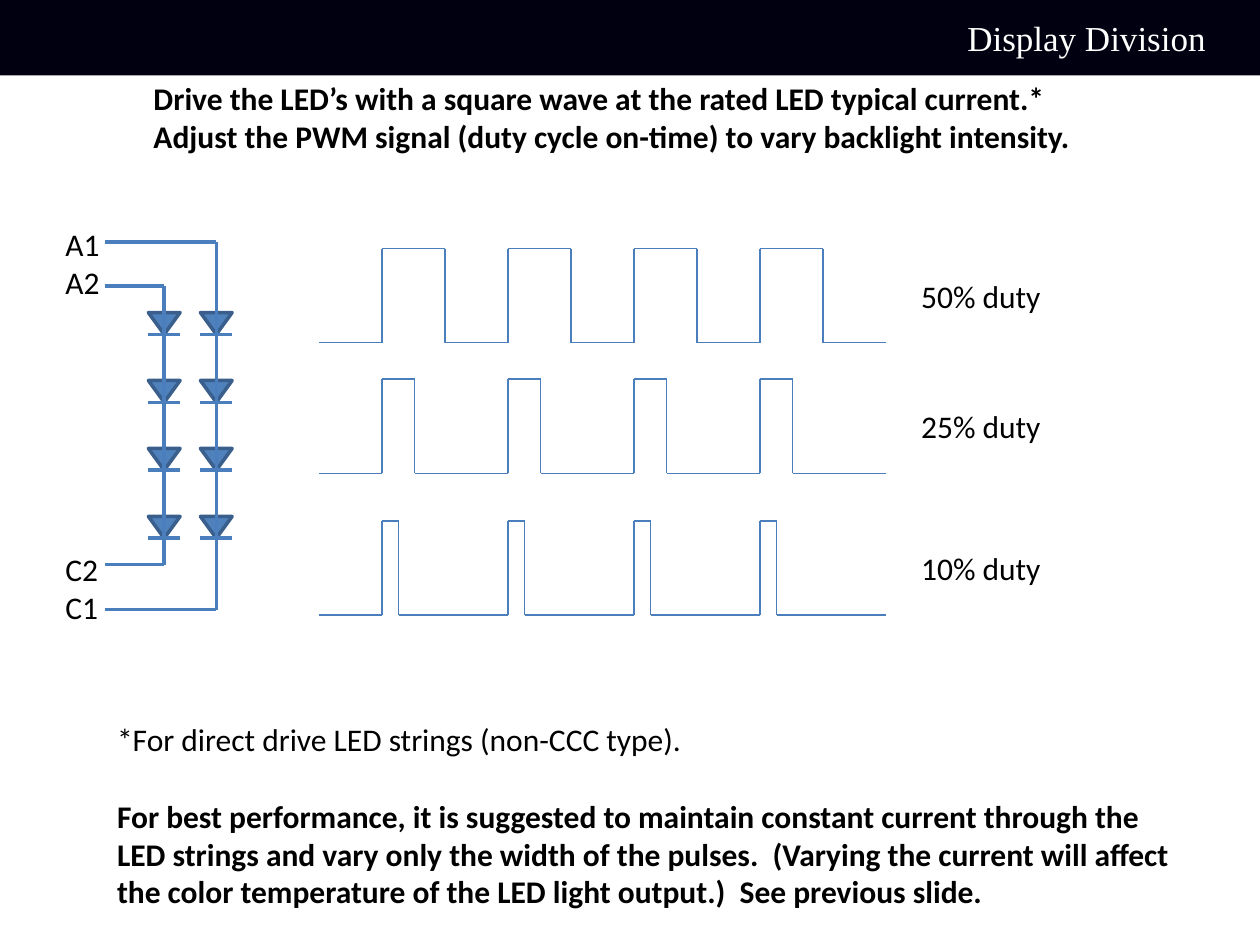
from itertools import pairwise

from lxml.etree import SubElement
from pptx import Presentation
from pptx.dml.color import RGBColor
from pptx.enum.shapes import MSO_CONNECTOR as Connector, MSO_SHAPE as Shape
from pptx.enum.text import MSO_ANCHOR as Anchor, MSO_AUTO_SIZE as AutoSize, PP_ALIGN as Align
from pptx.oxml.ns import qn
from pptx.util import Cm, Pt

COLORS = {
    "band": "000010",
    "white": "FFFFFF",
    "text": "000000",
    "line": "4B7EBC",
    "diode": "4F81BD",
    "diode_edge": "3A5F8C",
}
WAVE_LEFT, PERIOD, PULSE_HEIGHT, LEAD_IN = 6.43, 2.54, 1.9, 1.27
WAVES = [("50% duty", 6.91, 1.27), ("25% duty", 9.54, 0.66), ("10% duty", 12.4, 0.34)]
TERMINAL_X, INNER_X, OUTER_X = 2.11, 3.31, 4.36
DIODE_TOP, DIODE_PITCH, DIODE_WIDTH, DIODE_HEIGHT = 6.3, 1.37, 0.64, 0.44


def color(name):
    """Return the named colour."""
    return RGBColor.from_string(COLORS[name])


def write_text(shape, lines, size=18, font="Calibri", fill="text", bold=False):
    """Fill a shape with left-aligned, top-anchored lines."""
    frame = shape.text_frame
    frame.text = "\n".join(lines)
    frame.word_wrap = True
    frame.auto_size = AutoSize.NONE
    frame.vertical_anchor = Anchor.TOP
    for paragraph in frame.paragraphs:
        paragraph.alignment = Align.LEFT
        for run in paragraph.runs:
            run.font.size = Pt(size)
            run.font.name = font
            run.font.bold = bold
            run.font.color.rgb = color(fill)
    return frame


def add_text(shapes, left, top, width, height, lines, **style):
    """Add a text box."""
    box = shapes.add_textbox(Cm(left), Cm(top), Cm(width), Cm(height))
    return write_text(box, lines, **style)


def add_path(shapes, points, width):
    """Join points with straight connectors."""
    for start, end in pairwise(points):
        line = shapes.add_connector(Connector.STRAIGHT, *map(Cm, start + end))
        line.line.color.rgb = color("line")
        line.line.width = Pt(width)
        SubElement(line._element.spPr, qn("a:effectLst"))


def add_wave(shapes, label, base, pulse):
    """Draw four pulses with their duty label."""
    points = [(WAVE_LEFT, base)]
    for index in range(4):
        rise = WAVE_LEFT + LEAD_IN + index * PERIOD
        fall, crest = rise + pulse, base - PULSE_HEIGHT
        points += [(rise, base), (rise, crest), (fall, crest), (fall, base)]
    points.append((WAVE_LEFT + 4.5 * PERIOD, base))
    add_path(shapes, points, 0.75)
    add_text(shapes, 18.32, base - 1.46, 3.18, 1.02, [label])


def add_diode(shapes, center, top):
    """Draw one diode with its bar and lead."""
    left, bar = center - DIODE_WIDTH / 2, top + DIODE_HEIGHT
    triangle = shapes.add_shape(
        Shape.ISOSCELES_TRIANGLE, Cm(left), Cm(top), Cm(DIODE_WIDTH), Cm(DIODE_HEIGHT)
    )
    triangle.rotation = 180
    triangle.shadow.inherit = False
    triangle.fill.solid()
    triangle.fill.fore_color.rgb = color("diode")
    triangle.line.color.rgb = color("diode_edge")
    triangle.line.width = Pt(2)
    add_path(shapes, [(left + DIODE_WIDTH, bar), (left, bar)], 2)
    add_path(shapes, [(center, top + 0.97), (center, top - 0.53)], 2)


def add_led_strings(shapes):
    """Draw both LED strings with their terminals."""
    for center in (OUTER_X, INNER_X):
        for row in range(4):
            add_diode(shapes, center, DIODE_TOP + row * DIODE_PITCH)
    for inner, outer in ((5.77, 4.88), (11.38, 12.29)):
        add_path(shapes, [(TERMINAL_X, inner), (INNER_X, inner)], 2)
        add_path(shapes, [(TERMINAL_X, outer), (OUTER_X, outer), (OUTER_X, inner)], 2)
    for top, names in ((4.42, ["A1", "A2"]), (10.97, ["C2", "C1"])):
        add_text(shapes, 1.07, top, 1.6, 1.8, names)


def add_header(slide):
    """Draw the dark band, its caption and the slide title."""
    band = slide.shapes.add_shape(Shape.RECTANGLE, 0, 0, Cm(25.4), Cm(1.52))
    band.shadow.inherit = False
    band.fill.solid()
    band.fill.fore_color.rgb = color("band")
    band.line.fill.background()
    add_text(slide.shapes, 19.25, 0.2, 6.55, 1.12, ["Display Division"],
             size=20, font="Times New Roman", fill="white")
    title = slide.shapes.title
    title.left, title.top, title.width, title.height = map(Cm, (2.84, 1.47, 19.43, 1.8))
    write_text(title, [
        "Drive the LED’s with a square wave at the rated LED typical current.*",
        "Adjust the PWM signal (duty cycle on-time) to vary backlight intensity.",
    ], bold=True)


def add_notes(shapes):
    """Write the footnote and the bold advice."""
    frame = add_text(shapes, 2.11, 14.4, 22.02, 4.11, [
        "*For direct drive LED strings (non-CCC type).",
        "For best performance, it is suggested to maintain constant current through the "
        "LED strings and vary only the width of the pulses.  (Varying the current will "
        "affect the color temperature of the LED light output.)  See previous slide.",
    ])
    advice = frame.paragraphs[1]
    advice.space_before = Pt(22)
    advice.runs[0].font.bold = True


def main():
    """Build and save the slide."""
    presentation = Presentation()
    presentation.slide_width, presentation.slide_height = Cm(25.4), Cm(19.05)
    slide = presentation.slides.add_slide(presentation.slide_layouts[5])
    add_header(slide)
    waves = slide.shapes.add_group_shape()
    for label, base, pulse in WAVES:
        add_wave(waves.shapes, label, base, pulse)
    add_notes(slide.shapes)
    add_led_strings(slide.shapes.add_group_shape().shapes)
    presentation.save("out.pptx")


if __name__ == "__main__":
    main()
